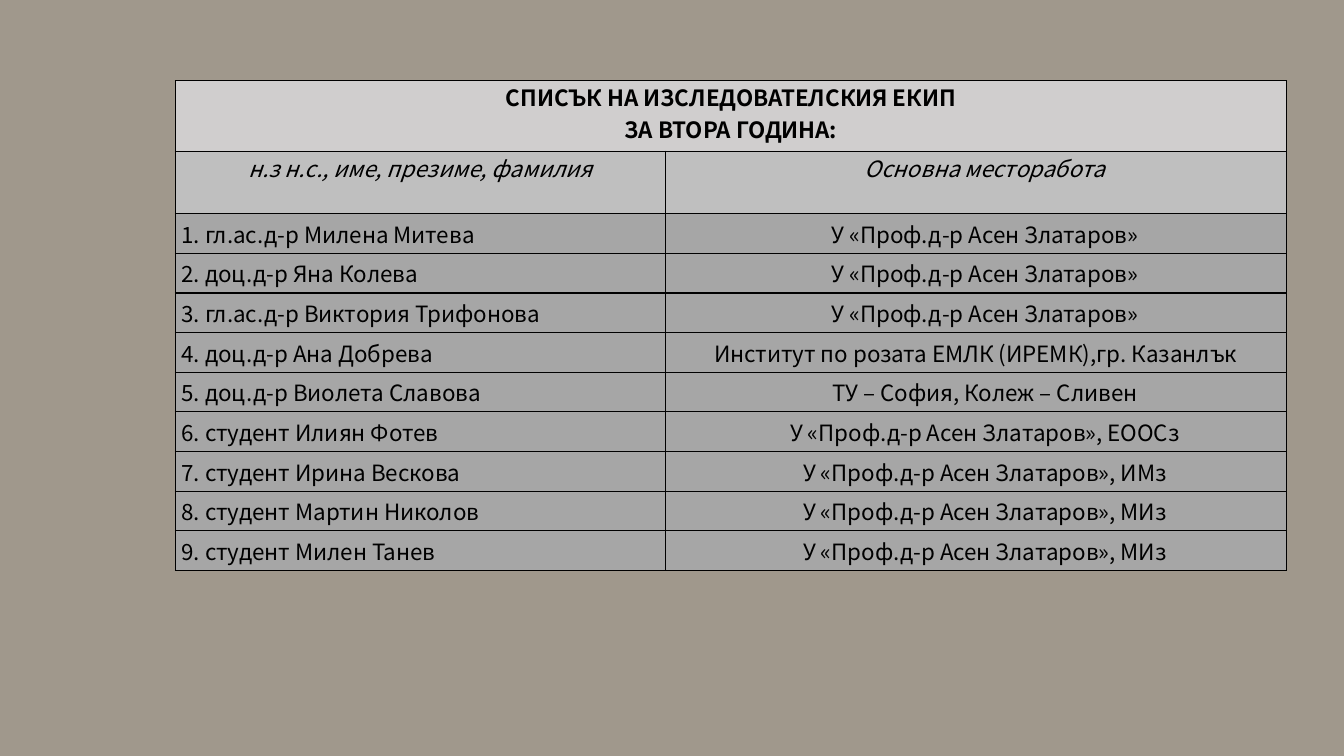
from lxml import etree
from pptx import Presentation
from pptx.dml.color import RGBColor
from pptx.enum.text import MSO_ANCHOR, PP_ALIGN
from pptx.oxml.ns import qn
from pptx.util import Inches, Pt

CENTER, JUSTIFY = PP_ALIGN.CENTER, PP_ALIGN.JUSTIFY
TOP, MIDDLE = MSO_ANCHOR.TOP, MSO_ANCHOR.MIDDLE

FONT = "Noto Sans CJK KR"
BLACK = "000000"
BACKGROUND, TITLE_FILL, HEADING_FILL, MEMBER_FILL = "A0988C", "D0CECE", "BFBFBF", "A6A6A6"
TITLE_HEIGHT, HEADING_HEIGHT = 0.7, 0.62
NAME_SHARE = 0.441
WORKPLACE_INDENT = 0.18

TITLE = "СПИСЪК НА ИЗСЛЕДОВАТЕЛСКИЯ ЕКИП\nЗА ВТОРА ГОДИНА:"
HEADINGS = ("н.з н.с., име, презиме, фамилия", "Основна месторабота")
UNIVERSITY = "У «Проф.д-р Асен Златаров»"
INSTITUTE = "Институт по розата ЕМЛК (ИРЕМК),гр. Казанлък"
TEAM = [
    ("гл.ас.д-р Милена Митева", UNIVERSITY),
    ("доц.д-р Яна Колева", UNIVERSITY),
    ("гл.ас.д-р Виктория Трифонова", UNIVERSITY),
    ("доц.д-р Ана Добрева", INSTITUTE),
    ("доц.д-р Виолета Славова", "ТУ – София, Колеж – Сливен"),
    ("студент Илиян Фотев", UNIVERSITY + ", ЕООСз"),
    ("студент Ирина Вескова", UNIVERSITY + ", ИМз"),
    ("студент Мартин Николов", UNIVERSITY + ", МИз"),
    ("студент Милен Танев", UNIVERSITY + ", МИз"),
]


def paint(fill, color):
    fill.solid()
    fill.fore_color.rgb = RGBColor.from_string(color)


def add_borders(cell):
    properties = cell._tc.get_or_add_tcPr()
    for side in ("a:lnL", "a:lnR", "a:lnT", "a:lnB"):
        line = etree.SubElement(properties, qn(side), w=str(Pt(1)))
        solid = etree.SubElement(line, qn("a:solidFill"))
        etree.SubElement(solid, qn("a:srgbClr"), val=BLACK)


def style_cell(cell, fill, text="", align=CENTER, anchor=TOP, indent=0, bold=False, italic=False):
    add_borders(cell)
    paint(cell.fill, fill)
    cell.margin_left = cell.margin_right = Inches(0.06)
    cell.margin_top = cell.margin_bottom = 0
    cell.vertical_anchor = anchor
    if not text:
        return
    cell.text_frame.text = text
    for paragraph in cell.text_frame.paragraphs:
        paragraph.alignment = align
        if indent:
            paragraph._p.get_or_add_pPr().set("indent", str(Inches(indent)))
        for run in paragraph.runs:
            run.font.name, run.font.size = FONT, Pt(16)
            run.font.bold, run.font.italic = bold, italic
            run.font.color.rgb = RGBColor.from_string(BLACK)


def add_team_table(slide, left, top, width, height):
    frame = slide.shapes.add_table(len(TEAM) + 2, 2, Inches(left), Inches(top),
                                   Inches(width), Inches(height))
    table = frame.table
    table.first_row = table.horz_banding = False

    # Column widths and row heights
    for column, share in zip(table.columns, (NAME_SHARE, 1 - NAME_SHARE)):
        column.width = Inches(width * share)
    member_height = (height - TITLE_HEIGHT - HEADING_HEIGHT) / len(TEAM)
    heights = [TITLE_HEIGHT, HEADING_HEIGHT] + [member_height] * len(TEAM)
    for row, row_height in zip(table.rows, heights):
        row.height = Inches(row_height)

    # Title across both columns
    table.cell(0, 0).merge(table.cell(0, 1))
    style_cell(table.cell(0, 0), TITLE_FILL, TITLE, bold=True)
    style_cell(table.cell(0, 1), TITLE_FILL)

    # Column headings
    for column, heading in enumerate(HEADINGS):
        style_cell(table.cell(1, column), HEADING_FILL, heading,
                   indent=column * WORKPLACE_INDENT, italic=True)

    # Numbered team members
    for number, (name, workplace) in enumerate(TEAM, 1):
        style_cell(table.cell(number + 1, 0), MEMBER_FILL, f"{number}. {name}", JUSTIFY, MIDDLE)
        indent = 0 if workplace == INSTITUTE else WORKPLACE_INDENT
        style_cell(table.cell(number + 1, 1), MEMBER_FILL, workplace, CENTER, MIDDLE, indent)


def main():
    presentation = Presentation()
    presentation.slide_width, presentation.slide_height = Inches(13.33), Inches(7.5)
    slide = presentation.slides.add_slide(presentation.slide_layouts[6])
    paint(slide.background.fill, BACKGROUND)
    add_team_table(slide, 1.74, 0.8, 11.02, 4.86)
    presentation.save("out.pptx")


if __name__ == "__main__":
    main()
